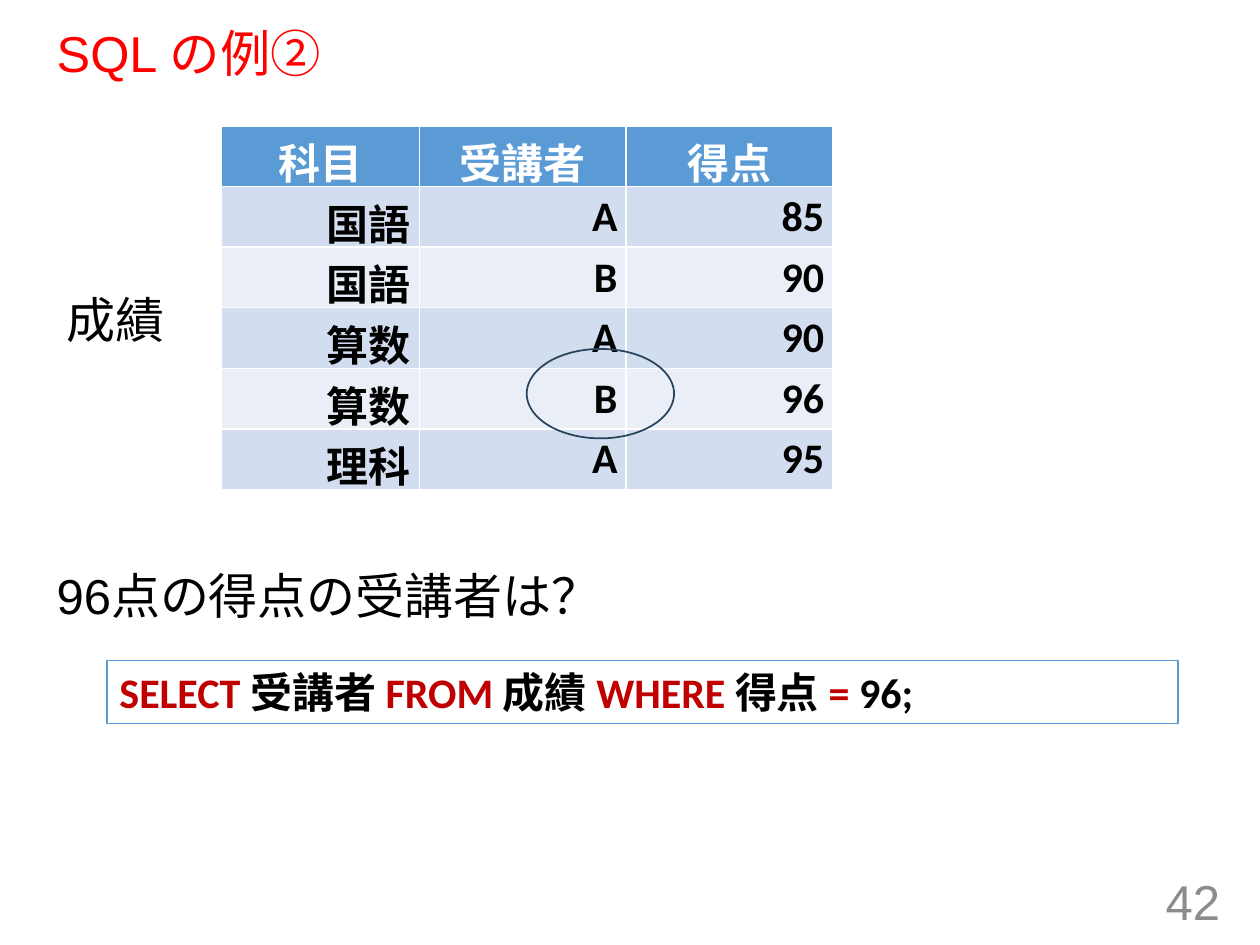
from dataclasses import dataclass

from pptx import Presentation
from pptx.dml.color import RGBColor
from pptx.enum.shapes import MSO_SHAPE
from pptx.enum.text import MSO_ANCHOR, MSO_AUTO_SIZE, PP_ALIGN
from pptx.util import Pt

LEFT, CENTER, RIGHT = PP_ALIGN.LEFT, PP_ALIGN.CENTER, PP_ALIGN.RIGHT
TOP, MIDDLE = MSO_ANCHOR.TOP, MSO_ANCHOR.MIDDLE
NO_FIT, GROW = MSO_AUTO_SIZE.NONE, MSO_AUTO_SIZE.SHAPE_TO_FIT_TEXT
RECT, OVAL = MSO_SHAPE.RECTANGLE, MSO_SHAPE.OVAL


@dataclass(frozen=True)
class Theme:
    sans: str = "Arial"
    code: str = "Calibri"
    title_size: float = 28.8
    body_size: float = 28
    code_size: float = 24
    black: str = "000000"
    white: str = "FFFFFF"
    red: str = "FF0000"
    keyword: str = "C00000"
    gray: str = "8C8C8C"
    blue: str = "5B9BD5"
    ring: str = "28445D"
    bands: tuple = ("D2DEEF", "EAEFF7")


T = Theme()

# Content
TITLE = "SQL の例②"
QUESTION = "96点の得点の受講者は？"
TABLE_NAME = "成績"
PAGE = "42"
HEADER = ("科目", "受講者", "得点")
RECORDS = [
    ("国語", "A", "85"),
    ("国語", "B", "90"),
    ("算数", "A", "90"),
    ("算数", "B", "96"),
    ("理科", "A", "95"),
]
QUERY = [
    ("SELECT ", T.keyword), ("受講者 ", T.black),
    ("FROM ", T.keyword), ("成績 ", T.black),
    ("WHERE ", T.keyword), ("得点 ", T.black),
    ("=", T.keyword), (" 96;", T.black),
]

# Layout: left, top, width, height in points
TITLE_BOX = (25.2, 13.7, 666, 36.7)
QUESTION_BOX = (25.2, 319.7, 666, 167)
PAGE_BOX = (542.2, 500.4, 162, 28.8)
NAME_BOX = (31, 162, 111.6, 58.3)
TABLE_BOX = (126.7, 72, 349.2, 205.2)
QUERY_BOX = (61.2, 377.3, 612, 36)
RING_BOX = (301, 199.4, 84.2, 51.1)
COLUMNS = (113, 118.1, 118.1)


def points(box):
    return [Pt(v) for v in box]


def place(sp, box):
    sp.left, sp.top, sp.width, sp.height = points(box)
    return sp


def write(tf, text, font=T.sans, size=T.body_size, color=T.black, bold=False,
          align=LEFT, anchor=TOP, before=0, spacing=None, fit=None):
    """Fill a text frame with a string or with (text, colour) pairs."""
    tf.word_wrap = True
    tf.vertical_anchor = anchor
    if fit is not None:
        tf.auto_size = fit
    p = tf.paragraphs[0]
    p.alignment = align
    p.space_before = Pt(before)
    if spacing:
        p.line_spacing = spacing
    for part, tint in [(text, color)] if isinstance(text, str) else text:
        r = p.add_run()
        r.text = part
        f = r.font
        f.name, f.size, f.bold = font, Pt(size), bold
        f.color.rgb = RGBColor.from_string(tint)


def outline(s, kind, box, color, width):
    sp = s.shapes.add_shape(kind, *points(box))
    sp.shadow.inherit = False
    sp.fill.background()
    sp.line.color.rgb = RGBColor.from_string(color)
    sp.line.width = Pt(width)
    return sp


prs = Presentation()
prs.slide_width, prs.slide_height = Pt(720), Pt(540)
s = prs.slides.add_slide(prs.slide_layouts[1])

# Title and question
title = place(s.shapes.title, TITLE_BOX)
write(title.text_frame, TITLE, size=T.title_size, color=T.red,
      anchor=MIDDLE, spacing=0.9, fit=NO_FIT)
body = place(s.placeholders[1], QUESTION_BOX)
write(body.text_frame, QUESTION, before=10, fit=NO_FIT)
pPr = body.text_frame.paragraphs[0]._p.get_or_add_pPr()
pPr.set("marL", "0")
pPr.set("indent", "0")
bullet = pPr.makeelement(
    "{http://schemas.openxmlformats.org/drawingml/2006/main}buNone", {})
pPr.append(bullet)

# Page number and table name
page = s.shapes.add_textbox(*points(PAGE_BOX))
write(page.text_frame, PAGE, color=T.gray, align=RIGHT, anchor=MIDDLE)
name = s.shapes.add_textbox(*points(NAME_BOX))
write(name.text_frame, TABLE_NAME, before=10)

# Score table
rows = [HEADER] + RECORDS
table = s.shapes.add_table(len(rows), len(HEADER), *points(TABLE_BOX)).table
for column, width in zip(table.columns, COLUMNS):
    column.width = Pt(width)
for i, row in enumerate(rows):
    head = i == 0
    fill = T.blue if head else T.bands[(i - 1) % 2]
    for j, value in enumerate(row):
        cell = table.cell(i, j)
        cell.margin_left = cell.margin_right = Pt(5)
        cell.margin_top = cell.margin_bottom = Pt(2.9)
        cell.fill.solid()
        cell.fill.fore_color.rgb = RGBColor.from_string(fill)
        write(cell.text_frame, value, font=T.code, size=T.code_size, bold=True,
              color=T.white if head else T.black,
              align=CENTER if head else RIGHT)

# Query and highlight ring
query = outline(s, RECT, QUERY_BOX, T.blue, 0.75)
write(query.text_frame, QUERY, font=T.code, size=T.code_size, bold=True, fit=GROW)
outline(s, OVAL, RING_BOX, T.ring, 1)

prs.save("out.pptx")
